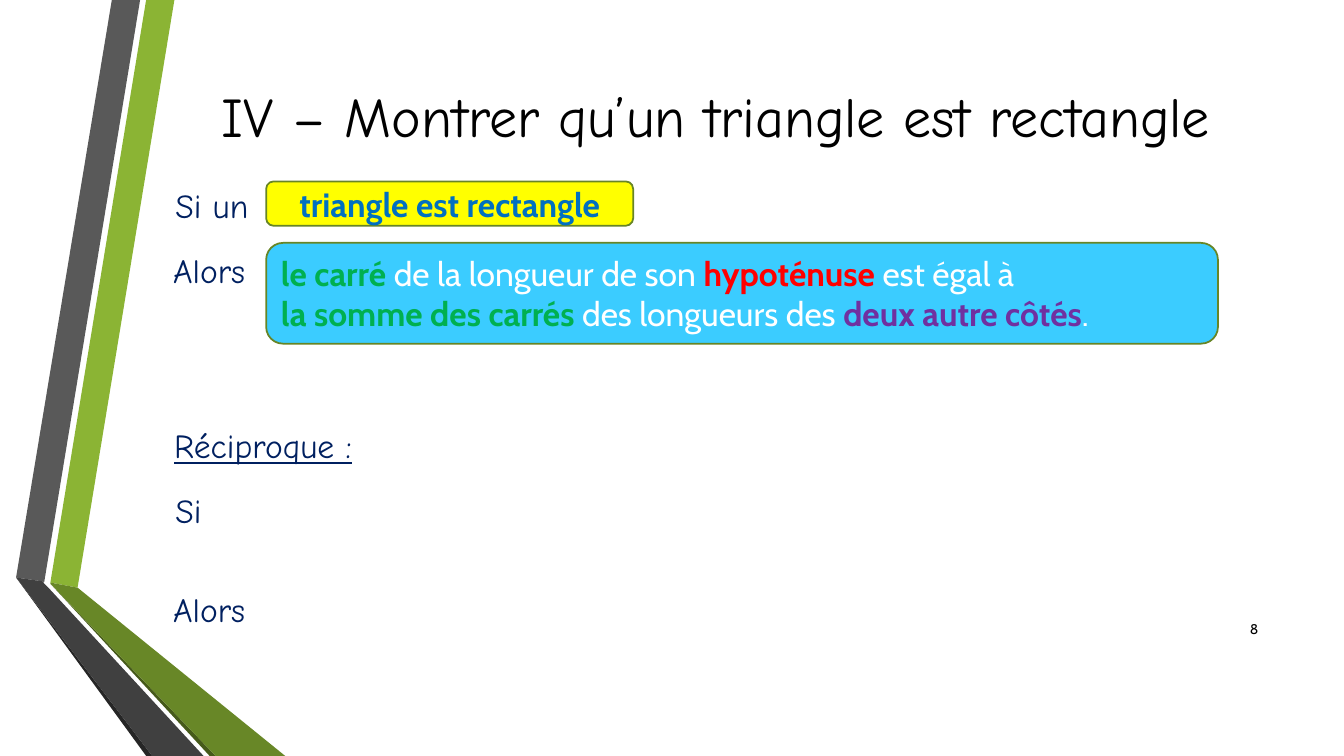
from dataclasses import dataclass

from lxml import etree
from pptx import Presentation
from pptx import util as u
from pptx.dml.color import RGBColor
from pptx.enum import shapes, text


@dataclass(frozen=True)
class Theme:
    heading_font: str = "Comic Neue"
    body_font: str = "Cabin"
    title_size: int = 40
    body_size: int = 24
    number_size: int = 10
    black: str = "000000"
    white: str = "FFFFFF"
    navy: str = "002060"
    blue: str = "0070C0"
    green: str = "00B050"
    red: str = "FF0000"
    purple: str = "7030A0"
    yellow: str = "FFFF00"
    sky: str = "3BCCFF"
    outline: str = "678526"


THEME = Theme()
ALIGN = text.PP_ALIGN
LINE_BREAK = None

# Folded ribbons: colour and corner points in inches
RIBBONS = [
    ("8BB434", [(0.5, 5.78), (0.77, 5.83), (1.73, 0), (1.45, 0)]),
    ("595959", [(1.39, 0), (1.11, 0), (0.16, 5.73), (0.44, 5.77)]),
    ("262626", [(0.16, 5.73), (1.45, 7.5), (1.51, 7.5)]),
    ("465A1A", [(0.5, 5.79), (2.08, 7.5), (2.14, 7.5)]),
    ("688727", [(0.5, 5.79), (2.14, 7.5), (2.83, 7.5), (0.77, 5.83), (0.5, 5.78)]),
    ("404040", [(2.02, 7.5), (0.48, 5.83), (0.43, 5.78), (0.44, 5.77),
                (0.16, 5.73), (1.51, 7.5)]),
]

# Labels: wording, left, top, extra font format
LABELS = [
    ("Si un", 1.64, 1.79, {}),
    ("Alors", 1.62, 2.43, {}),
    ("Réciproque :", 1.63, 4.17, {"underline": True}),
    ("Si", 1.64, 4.81, {}),
    ("Alors", 1.62, 5.79, {}),
]

# Coloured text: wording, colour, bold
CONDITION = [("triangle est rectangle", THEME.blue, True)]
CONCLUSION = [
    ("le carré ", THEME.green, True),
    ("de la longueur de son ", THEME.white, False),
    ("hypoténuse ", THEME.red, True),
    ("est égal à ", THEME.white, False),
    LINE_BREAK,
    ("la somme des carrés ", THEME.green, True),
    ("des longueurs des ", THEME.white, False),
    ("deux autre côtés", THEME.purple, True),
    (".", THEME.white, False),
]


def set_all(target, values):
    for name, value in values.items():
        setattr(target, name, value)


def place(shape, box):
    names = ("left", "top", "width", "height")
    set_all(shape, dict(zip(names, map(u.Inches, box))))


def fill_plain(shape, color):
    shape.shadow.inherit = False
    shape.fill.solid()
    shape.fill.fore_color.rgb = RGBColor.from_string(color)


def write(shape, runs, font, size, alignment, anchor=text.MSO_ANCHOR.MIDDLE, **extra):
    """Fill the shape with one paragraph of coloured runs."""
    set_all(shape.text_frame, {"word_wrap": True, "vertical_anchor": anchor,
                               "auto_size": text.MSO_AUTO_SIZE.NONE})
    paragraph = shape.text_frame.paragraphs[0]
    paragraph.alignment = alignment
    for part in runs:
        if part is LINE_BREAK:
            paragraph.add_line_break()
            continue
        wording, color, bold = part
        run = paragraph.add_run()
        run.text = wording
        set_all(run.font, {"name": font, "size": u.Pt(size), "bold": bold, **extra})
        run.font.color.rgb = RGBColor.from_string(color)


def add_ribbons(slide):
    for color, corners in RIBBONS:
        points = [(u.Inches(x), u.Inches(y)) for x, y in corners]
        builder = slide.shapes.build_freeform(*points[0])
        builder.add_line_segments(points[1:], close=True)
        ribbon = builder.convert_to_shape()
        fill_plain(ribbon, color)
        ribbon.line.fill.background()


def add_title(slide, wording, box):
    title = slide.shapes.title
    place(title, box)
    write(title, [(wording, THEME.black, False)], THEME.heading_font,
          THEME.title_size, ALIGN.CENTER)


def add_label(slide, wording, box, extra):
    label = slide.shapes.add_textbox(*map(u.Inches, box))
    write(label, [(wording, THEME.navy, False)], THEME.heading_font,
          THEME.body_size, ALIGN.LEFT, text.MSO_ANCHOR.TOP, **extra)


def add_card(slide, runs, box, color, alignment):
    card = slide.shapes.add_shape(shapes.MSO_SHAPE.ROUNDED_RECTANGLE,
                                  *map(u.Inches, box))
    fill_plain(card, color)
    card.line.color.rgb = RGBColor.from_string(THEME.outline)
    card.line.width = u.Pt(1.25)
    write(card, runs, THEME.body_font, THEME.body_size, alignment)


def add_page_number(slide, number, box):
    page_number = slide.shapes.add_textbox(*map(u.Inches, box))
    write(page_number, [(number, THEME.black, False)], THEME.body_font,
          THEME.number_size, ALIGN.RIGHT)


def build_theorem_slide(presentation):
    slide = presentation.slides.add_slide(presentation.slide_layouts[5])
    add_ribbons(slide)
    add_page_number(slide, "8", (11.98, 6.04, 0.6, 0.4))
    add_title(slide, "IV – Montrer qu’un triangle est rectangle",
              (1.62, 0.18, 10.96, 1.92))
    for wording, left, top, extra in LABELS:
        add_label(slide, wording, (left, top, 10.96, 0.5), extra)
    add_card(slide, CONCLUSION, (2.64, 2.41, 9.44, 1), THEME.sky, ALIGN.LEFT)
    add_card(slide, CONDITION, (2.64, 1.8, 3.64, 0.44), THEME.yellow, ALIGN.CENTER)


def main():
    presentation = Presentation()
    set_all(presentation, {"slide_width": u.Inches(13.33),
                           "slide_height": u.Inches(7.5)})
    build_theorem_slide(presentation)
    presentation.save("out.pptx")


if __name__ == "__main__":
    main()
